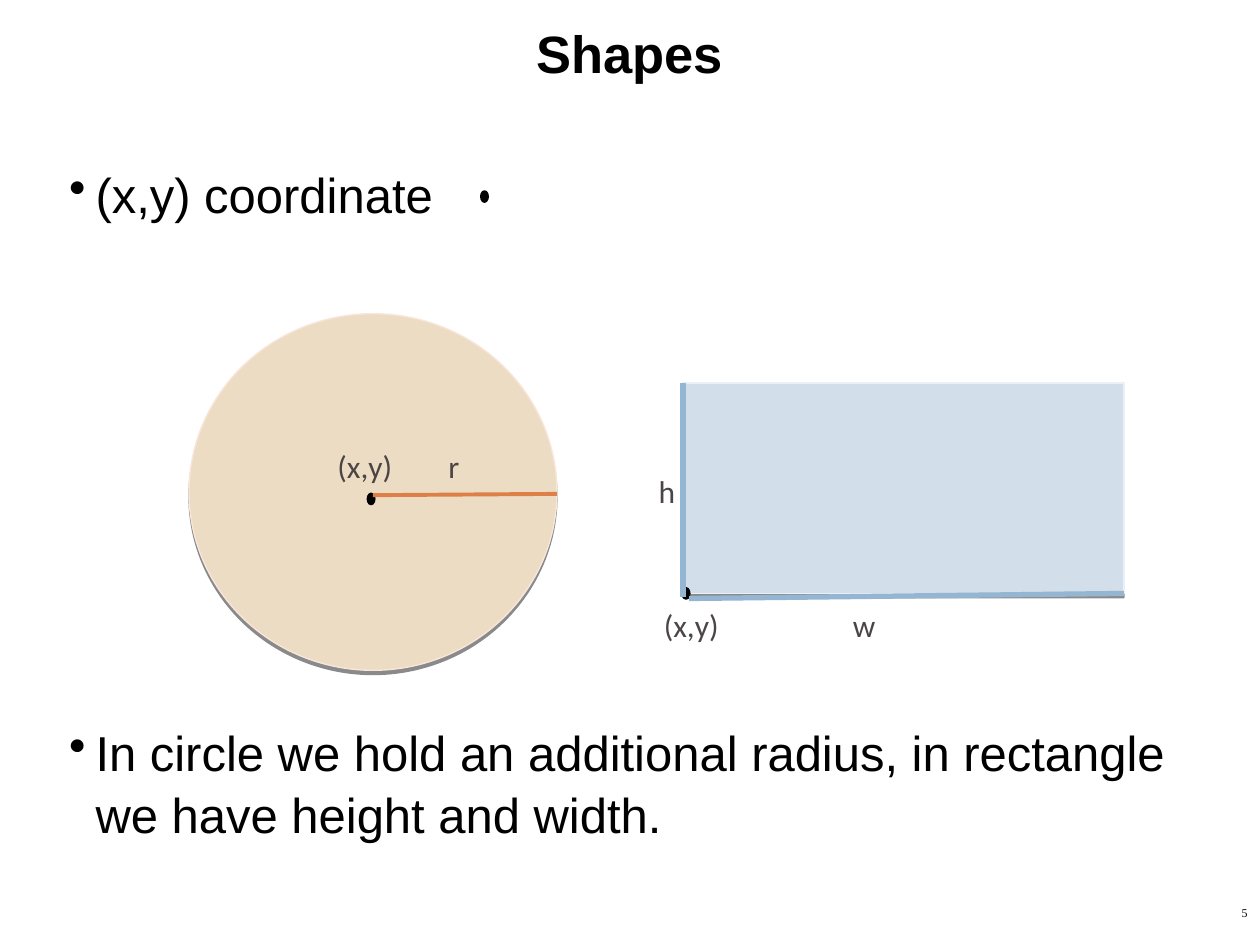
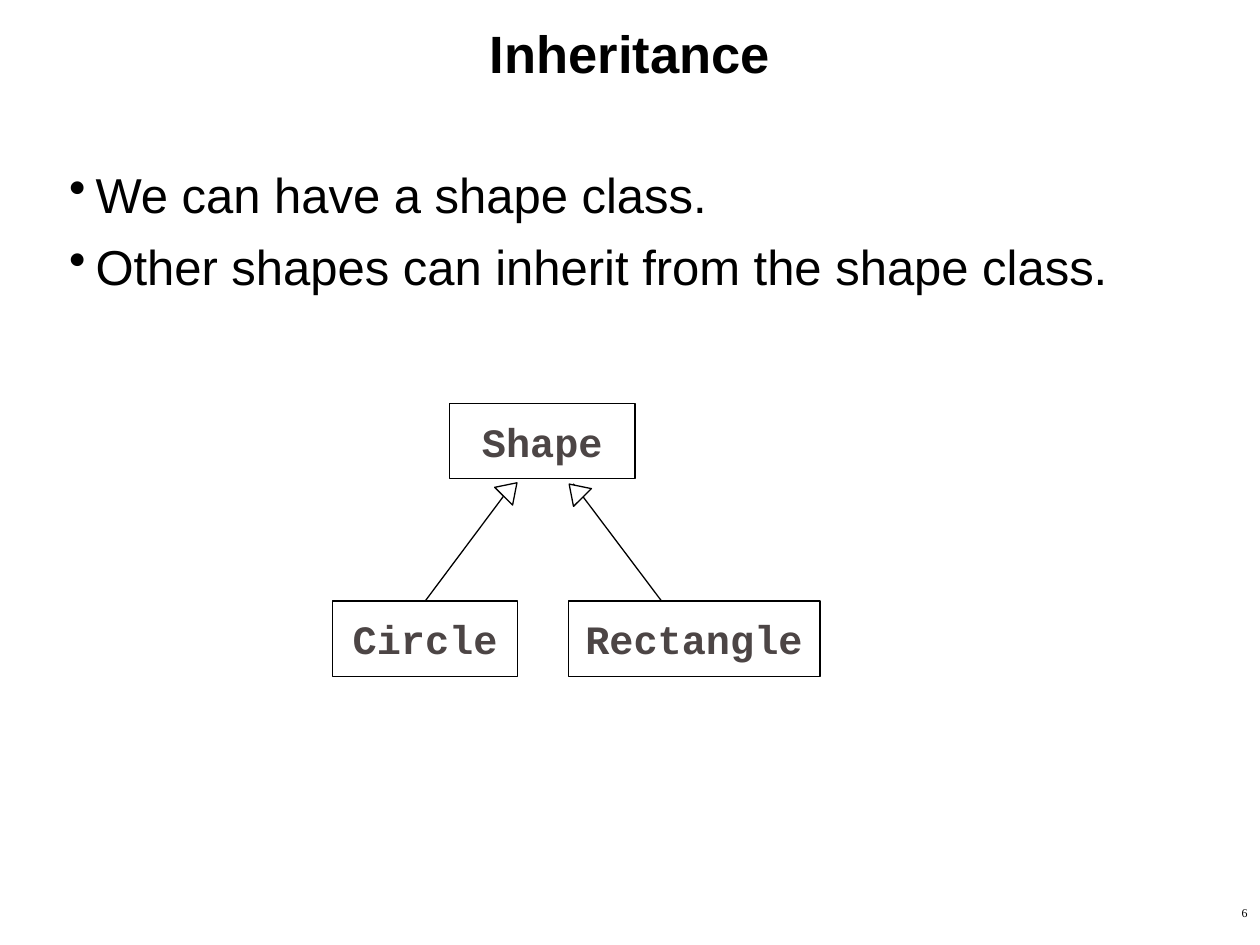
from dataclasses import dataclass

from lxml import etree
from pptx import Presentation
from pptx import util as u
from pptx.dml.color import RGBColor
from pptx.enum import shapes, text
from pptx.oxml import ns

# The slide is a grid of 100 columns by 75 rows
COLUMNS, ROWS = 100, 75
WIDTH, HEIGHT = u.Inches(10), u.Inches(7.5)

BLACK, WHITE, GREY = "000000", "FFFFFF", "4C4545"
SAND, SAND_EDGE, ORANGE = "ECDCC4", "F8E6DA", "DD8047"
PALE_BLUE, BLUE_EDGE, BLUE = "D2DEE9", "EAF0F6", "94B6D2"

KIND = shapes.MSO_SHAPE
ALIGN = text.PP_ALIGN
MIDDLE = text.MSO_ANCHOR.MIDDLE
INSETS = {"margin_left": u.Inches(0.1), "margin_right": u.Inches(0.1),
          "margin_top": u.Inches(0.05), "margin_bottom": u.Inches(0.05)}

BULLET_INDENT = u.Inches(0.21)
BULLET_SPACING = {"line_spacing": 1.05, "space_after": u.Pt(6)}


@dataclass(frozen=True)
class Box:
    column: float
    row: float
    columns: float
    rows: float

    def lengths(self) -> tuple:
        return (across(self.column), down(self.row),
                across(self.columns), down(self.rows))


@dataclass(frozen=True)
class TextStyle:
    font: str
    size: float
    color: str = BLACK
    bold: bool = False
    align: ALIGN = ALIGN.LEFT


@dataclass(frozen=True)
class Figure:
    kind: KIND
    box: Box
    fill: str
    edge: str = BLACK
    weight: float = 0.75
    rotation: float = 0
    shadow: bool = False


@dataclass(frozen=True)
class Segment:
    start: tuple
    end: tuple
    color: str = BLACK
    weight: float = 0.75


@dataclass(frozen=True)
class Label:
    wording: str
    column: float
    row: float


@dataclass(frozen=True)
class Bullet:
    wording: str
    space_before: float = 0


TITLE = TextStyle("Arial", 30, bold=True, align=ALIGN.CENTER)
BODY = TextStyle("Arial", 28)
NUMBER = TextStyle("Times New Roman", 6.8, align=ALIGN.RIGHT)
LABEL = TextStyle("Calibri", 18, GREY)
CLASS_NAME = TextStyle("Courier New", 23, GREY, True, ALIGN.CENTER)

TITLE_BOX = Box(0, 0, 100, 8.4)
BODY_BOX = Box(4.5, 12.3, 91.5, 59)
NUMBER_BOX = Box(79.2, 71.4, 20.8, 3.6)


# Helpers
def across(columns: float) -> int:
    return round(WIDTH * columns / COLUMNS)


def down(rows: float) -> int:
    return round(HEIGHT * rows / ROWS)


def color_of(code: str) -> RGBColor:
    return RGBColor.from_string(code)


def set_all(target, formats: dict) -> None:
    for name, value in formats.items():
        setattr(target, name, value)


def add_element(parent, tag: str, **attributes):
    return etree.SubElement(parent, ns.qn(tag), attributes)


def write(paragraph, wording: str, style: TextStyle) -> None:
    run = paragraph.add_run()
    run.text = wording
    paragraph.alignment = style.align
    set_all(run.font, {"name": style.font, "size": u.Pt(style.size),
                       "bold": style.bold})
    run.font.color.rgb = color_of(style.color)


def add_text(slide, box: Box, wording: str, style: TextStyle,
             anchor=text.MSO_ANCHOR.TOP) -> None:
    frame = slide.shapes.add_textbox(*box.lengths()).text_frame
    set_all(frame, {**INSETS, "word_wrap": True, "vertical_anchor": anchor})
    write(frame.paragraphs[0], wording, style)


def add_bullets(slide, bullets: list[Bullet]) -> None:
    frame = slide.shapes.add_textbox(*BODY_BOX.lengths()).text_frame
    set_all(frame, {**INSETS, "word_wrap": True})
    for index, bullet in enumerate(bullets):
        paragraph = frame.add_paragraph() if index else frame.paragraphs[0]
        write(paragraph, bullet.wording, BODY)
        set_all(paragraph, {**BULLET_SPACING,
                            "space_before": u.Pt(bullet.space_before)})
        properties = paragraph._p.get_or_add_pPr()
        properties.set("marL", str(BULLET_INDENT))
        properties.set("indent", str(-BULLET_INDENT))
        add_element(properties, "a:buChar", char="•")


def add_figure(slide, figure: Figure):
    shape = slide.shapes.add_shape(figure.kind, *figure.box.lengths())
    shape.rotation = figure.rotation
    shape.fill.solid()
    shape.fill.fore_color.rgb = color_of(figure.fill)
    shape.line.color.rgb = color_of(figure.edge)
    shape.line.width = u.Pt(figure.weight)
    shape.shadow.inherit = False
    if figure.shadow:
        effects = shape.element.spPr.find(ns.qn("a:effectLst"))
        outer = add_element(effects, "a:outerShdw", blurRad="0",
                            dist=str(u.Pt(2.4)), dir="5400000",
                            rotWithShape="0")
        tint = add_element(outer, "a:srgbClr", val=BLACK)
        add_element(tint, "a:alpha", val="45000")
    return shape


def add_dot(slide, column: float, row: float) -> None:
    add_figure(slide, Figure(KIND.OVAL, Box(column, row, 0.5, 0.8),
                             BLACK, weight=1.5))


def add_segment(slide, segment: Segment):
    (x1, y1), (x2, y2) = segment.start, segment.end
    connector = slide.shapes.add_connector(
        shapes.MSO_CONNECTOR.STRAIGHT,
        across(x1), down(y1), across(x2), down(y2))
    connector.line.color.rgb = color_of(segment.color)
    connector.line.width = u.Pt(segment.weight)
    add_element(connector._element.spPr, "a:effectLst")
    return connector


def add_class_box(slide, name: str, box: Box):
    shape = add_figure(slide, Figure(KIND.RECTANGLE, box, WHITE))
    set_all(shape.text_frame, {**INSETS, "word_wrap": False,
                               "vertical_anchor": MIDDLE})
    write(shape.text_frame.paragraphs[0], name, CLASS_NAME)
    return shape


def start_slide(presentation, title: str, number: int, bullets: list[Bullet]):
    slide = presentation.slides.add_slide(presentation.slide_layouts[6])
    add_text(slide, TITLE_BOX, title, TITLE, MIDDLE)
    add_bullets(slide, bullets)
    add_text(slide, NUMBER_BOX, str(number), NUMBER)
    return slide


# Slides
def build_shapes(presentation) -> None:
    slide = start_slide(presentation, "Shapes", 5, [
        Bullet("(x,y) coordinate"),
        Bullet("In circle we hold an additional radius, in rectangle "
               "we have height and width.", space_before=278),
    ])
    add_dot(slide, 38.2, 15.2)

    # Rectangle and circle with their anchor points
    for figure in (
        Figure(KIND.RECTANGLE, Box(54.2, 30.4, 35, 16.7), PALE_BLUE,
               BLUE_EDGE, 0.79, shadow=True),
        Figure(KIND.OVAL, Box(15, 24.9, 29.2, 28.3), SAND,
               SAND_EDGE, 0.79, shadow=True),
    ):
        add_figure(slide, figure)
    add_dot(slide, 29.2, 39.2)
    add_dot(slide, 54.2, 46.7)

    # Radius, height and width
    for segment in (
        Segment((29.6, 39.3), (44.2, 39.2), ORANGE, 2.25),
        Segment((54.2, 30.4), (54.2, 47.4), BLUE, 3),
        Segment((89.2, 47.1), (54.7, 47.5), BLUE, 3),
    ):
        add_segment(slide, segment)
    for label in (
        Label("(x,y)", 25.8, 35),
        Label("r", 34.6, 35),
        Label("(x,y)", 51.7, 47.6),
        Label("w", 66.7, 47.6),
        Label("h", 51.3, 37),
    ):
        add_text(slide, Box(label.column, label.row, 8, 4),
                 label.wording, LABEL)


def build_inheritance(presentation) -> None:
    slide = start_slide(presentation, "Inheritance", 6, [
        Bullet("We can have a shape class."),
        Bullet("Other shapes can inherit from the shape class."),
    ])

    # Class boxes
    add_class_box(slide, "Shape", Box(35.7, 32, 14.7, 6))
    circle = add_class_box(slide, "Circle", Box(26.4, 47.7, 14.7, 6))
    add_class_box(slide, "Rectangle", Box(45.1, 47.7, 20, 6))

    # Inheritance arrows with hollow heads
    circle_line = add_segment(slide, Segment((33.7, 47.7), (40.7, 38.4)))
    circle_line.begin_connect(circle, 0)
    add_segment(slide, Segment((52.5, 47.7), (45.5, 38.4)))
    for column, row, rotation in ((39.5, 38.1, 44.8), (44.7, 38.2, 315.2)):
        add_figure(slide, Figure(KIND.ISOSCELES_TRIANGLE,
                                 Box(column, row, 2, 1.5), WHITE,
                                 rotation=rotation))


def main() -> None:
    presentation = Presentation()
    set_all(presentation, {"slide_width": WIDTH, "slide_height": HEIGHT})
    build_shapes(presentation)
    build_inheritance(presentation)
    presentation.save("out.pptx")


if __name__ == "__main__":
    main()
